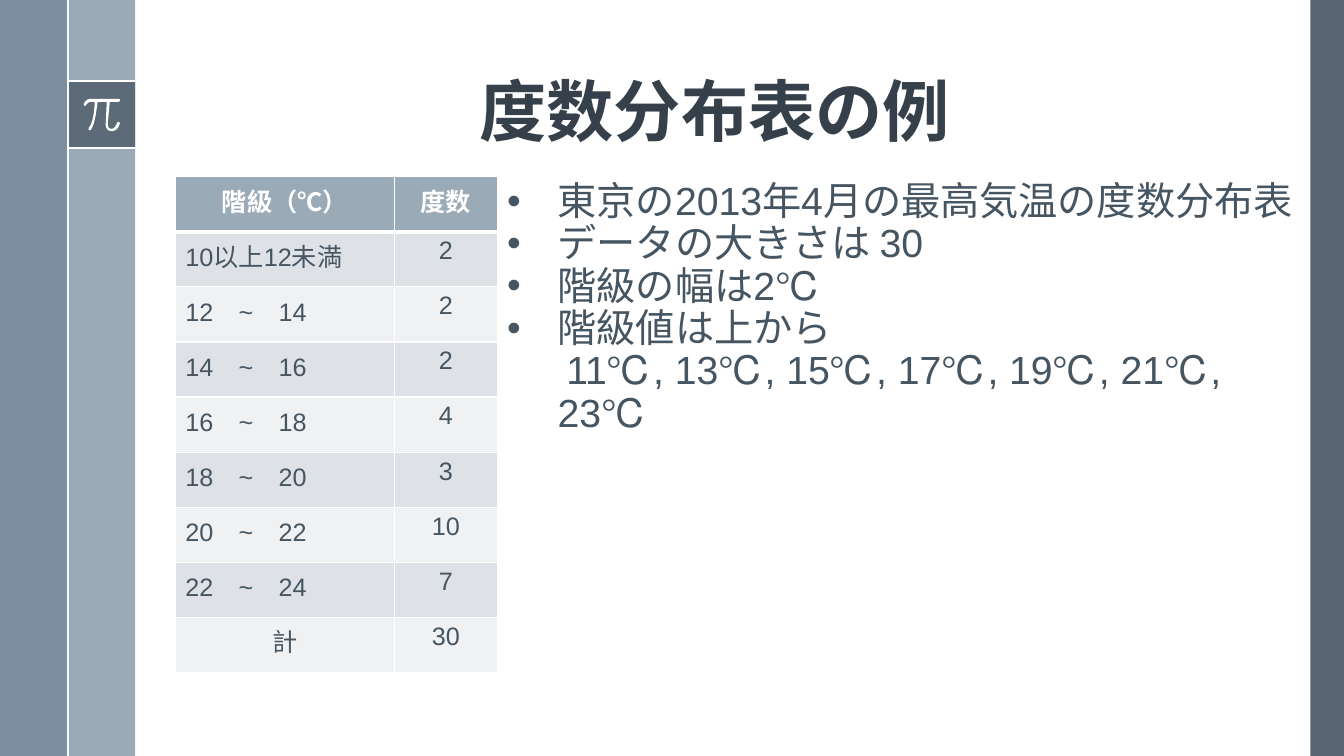
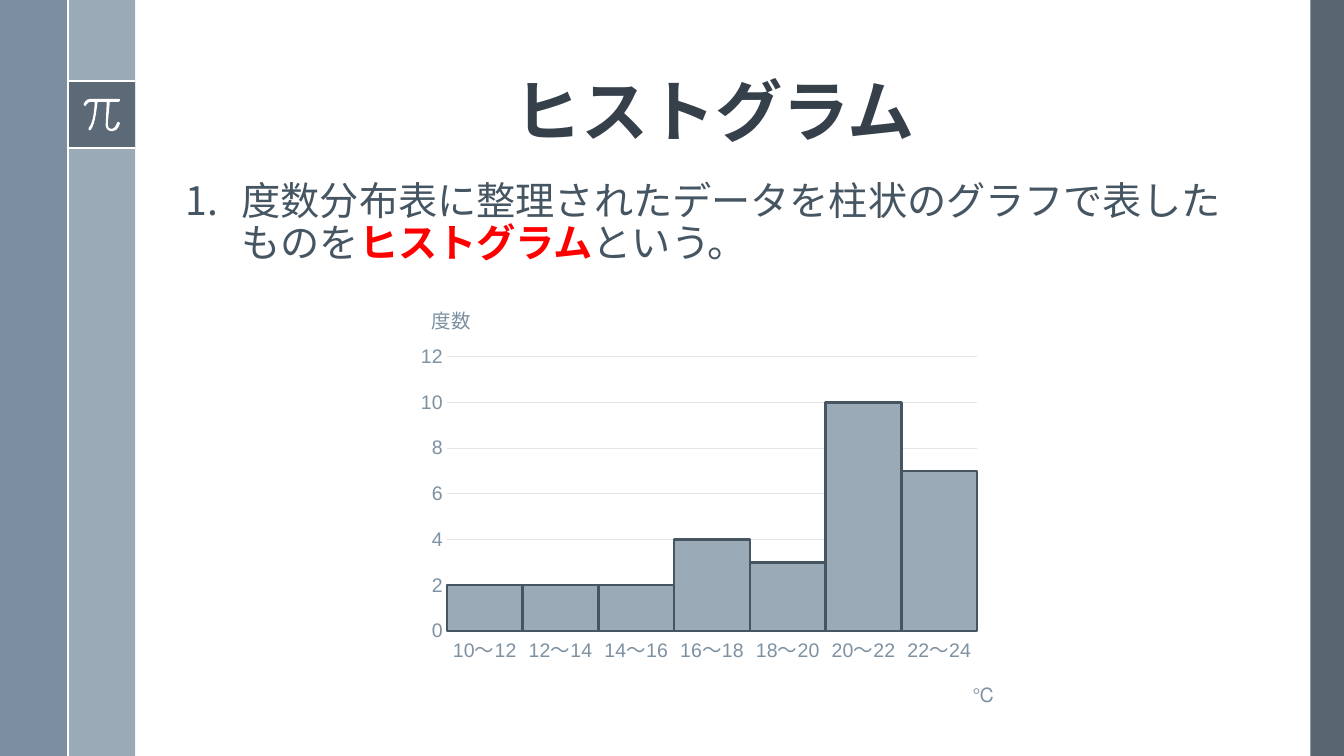
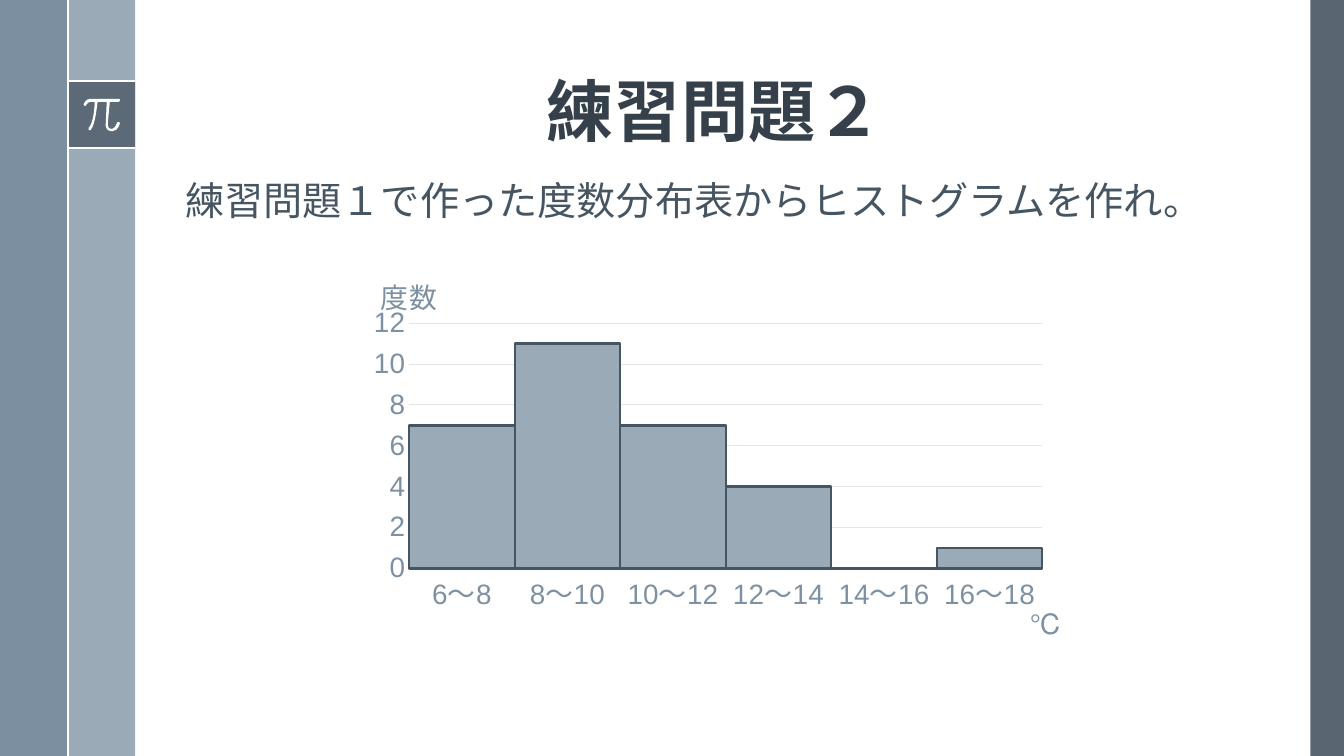
from lxml.etree import SubElement
from pptx import Presentation
from pptx.chart.data import CategoryChartData
from pptx.dml.color import RGBColor
from pptx.enum.chart import XL_CHART_TYPE, XL_TICK_MARK
from pptx.enum.shapes import MSO_CONNECTOR, MSO_SHAPE
from pptx.enum.text import MSO_ANCHOR, PP_ALIGN
from pptx.oxml.ns import qn
from pptx.util import Emu, Inches, Pt

# Palette and fonts
WHITE, DARK, INK, GREY = "FFFFFF", "35404A", "465562", "7D91A2"
STEEL, SLATE, BLUE, RED = "9BAAB7", "475562", "6A8093", "FF0000"
PALE, LIGHT, RULE = "DEE2E6", "EFF1F3", "E1E6EA"
LATIN, CJK = "Arial", "Noto Sans CJK JP"

# The slide is 20 columns wide; rows are as tall as columns are wide
WIDE, HIGH, COLS = Inches(13.333), Inches(7.5), 20
ROWS = 11.25
LEFT, TOP, SPAN = 2.61, 2.63, 16.05

# Outline of the pi sign: start, then cubic curves, in 1/100 inch
PI_START, PI_BOX = (118, 98), (83, 98)
PI_CURVES = [
    (90, 98, 90, 98, 90, 98), (85, 98, 83, 103, 83, 104),
    (83, 104, 83, 105, 84, 105), (85, 105, 85, 105, 85, 105),
    (85, 105, 87, 101, 90, 101), (94, 101, 94, 101, 94, 101),
    (94, 105, 93, 122, 88, 127), (87, 128, 87, 128, 88, 129),
    (88, 129, 89, 129, 90, 129), (95, 123, 96, 105, 97, 101),
    (106, 101, 106, 101, 106, 101), (105, 122, 105, 122, 105, 122),
    (105, 122, 104, 126, 107, 129), (108, 130, 109, 130, 110, 130),
    (111, 130, 111, 130, 112, 130), (117, 130, 119, 123, 119, 122),
    (119, 122, 118, 121, 118, 121), (117, 121, 116, 121, 116, 122),
    (116, 122, 115, 127, 111, 128), (110, 128, 109, 128, 108, 127),
    (107, 126, 107, 123, 107, 122), (109, 101, 109, 101, 109, 101),
    (118, 101, 118, 101, 118, 101), (119, 101, 119, 100, 119, 100),
    (119, 99, 119, 98, 118, 98),
]


def hue(code):
    return RGBColor.from_string(code)


def unit(count):
    return Emu(round(count * WIDE / COLS))


def box(*cells):
    return [unit(cell) for cell in cells]


def bend(shape, curves):
    """Turn the straight sides of an outline into cubic curves."""
    sides = list(shape._element.iter(qn("a:lnTo")))
    for side, curve in zip(sides, curves):
        side.tag = qn("a:cubicBezTo")
        for spot in range(2):
            knot = SubElement(side, qn("a:pt"))
            for key, value, base in zip("xy", curve[2 * spot:], PI_BOX):
                knot.set(key, str(Inches((value - base) / 100)))
            side.insert(spot, knot)


def style(run, size, color, face=LATIN, bold=False):
    font = run.font
    font.size, font.name, font.bold = Pt(size), face, bold
    font.color.rgb = hue(color)
    SubElement(run.font._element, qn("a:ea")).set("typeface", CJK)


def edge(cell, head):
    """White cell borders, heavier below the header."""
    props = cell._tc.get_or_add_tcPr()
    for spot, side in enumerate("LRTB"):
        thick = 3 if head and side == "B" else 1
        line = SubElement(props, qn(f"a:ln{side}"), w=str(Pt(thick)))
        props.insert(spot, line)
        fill = SubElement(line, qn("a:solidFill"))
        SubElement(fill, qn("a:srgbClr")).set("val", WHITE)


def place(node, index, frame, cells):
    """Fix a chart part at grid cells of the slide."""
    old = node.find(qn("c:layout"))
    if old is not None:
        node.remove(old)
    layout = SubElement(node, qn("c:layout"))
    node.insert(index, layout)
    spot = SubElement(layout, qn("c:manualLayout"))
    if len(cells) == 4:
        SubElement(spot, qn("c:layoutTarget")).set("val", "inner")
    for key in "xy":
        SubElement(spot, qn(f"c:{key}Mode")).set("val", "edge")
    x, y, w, h = frame
    for key, cell, base, full in zip("xywh", cells, (x, y, 0, 0),
                                     (w, h, w, h)):
        share = (cell - base) / full
        SubElement(spot, qn(f"c:{key}")).set("val", f"{share:.4f}")


class Deck:
    def __init__(self):
        self.file = Presentation()
        self.file.slide_width, self.file.slide_height = WIDE, HIGH
        self.slide = None

    def new(self, title):
        """Start a slide with the shared bands, sign and title."""
        self.slide = self.file.slides.add_slide(self.file.slide_layouts[6])
        self.band(19.5, 0, 0.5, ROWS, SLATE, 90)
        self.band(1.01, 0, 1, ROWS, STEEL)
        self.band(0, 0, 1.01, ROWS, BLUE, 88)
        self.band(1.01, 1.21, 1, 1, SLATE, 75)
        for y in (1.21, 2.2):
            self.line(1.01, y, 2.01, y)
        self.sign()
        self.line(1.01, 0, 1.01, ROWS)
        frame = self.text([[(title, DARK, True)]], LEFT, 0.28, SPAN, 2.04,
                          size=48, face=CJK)
        frame.vertical_anchor = MSO_ANCHOR.BOTTOM
        frame.paragraphs[0].alignment = PP_ALIGN.CENTER

    def paint(self, shape, color):
        shape.shadow.inherit = False
        shape.fill.solid()
        shape.fill.fore_color.rgb = hue(color)
        shape.line.fill.background()

    def band(self, x, y, w, h, color, alpha=100):
        shape = self.slide.shapes.add_shape(MSO_SHAPE.RECTANGLE,
                                            *box(x, y, w, h))
        self.paint(shape, color)
        if alpha < 100:
            tint = shape.fill._xPr.find(".//" + qn("a:srgbClr"))
            SubElement(tint, qn("a:alpha")).set("val", str(alpha * 1000))

    def line(self, *ends):
        line = self.slide.shapes.add_connector(MSO_CONNECTOR.STRAIGHT,
                                               *box(*ends))
        line.line.color.rgb = hue(WHITE)
        line.line.width = Pt(1.5)
        SubElement(line._element.spPr, qn("a:effectLst"))

    def sign(self):
        pen = self.slide.shapes.build_freeform(*PI_START, Inches(0.01))
        pen.add_line_segments([curve[4:] for curve in PI_CURVES], close=True)
        shape = pen.convert_to_shape()
        self.paint(shape, WHITE)
        scale = shape._element.find(".//" + qn("a:path"))
        scale.set("w", str(shape.width))
        scale.set("h", str(shape.height))
        for knot in scale.iter(qn("a:pt")):
            for key in "xy":
                value = int(knot.get(key))
                if value < 1000:
                    knot.set(key, str(Inches(value / 100)))
        bend(shape, PI_CURVES)

    def text(self, paras, x, y, w, h, size=28, face=LATIN, before=0,
             mark=None, indent=0):
        """Each paragraph is a list of (words, colour, bold)."""
        frame = self.slide.shapes.add_textbox(*box(x, y, w, h)).text_frame
        frame.word_wrap = True
        frame.text = "\n".join("" for _ in paras)
        for para, parts in zip(frame.paragraphs, paras):
            para.line_spacing, para.space_before = 0.9, Pt(before)
            for words, color, bold in parts:
                for row, piece in enumerate(words.split("\n")):
                    if row:
                        para.add_line_break()
                    run = para.add_run()
                    run.text = piece
                    style(run, size, color, face, bold)
            if mark:
                self.bullet(para, mark, indent)
        return frame

    def bullet(self, para, mark, indent):
        props = para._p.get_or_add_pPr()
        props.set("marL", str(Inches(indent)))
        props.set("indent", str(-Inches(indent)))
        if mark == "1.":
            SubElement(props, qn("a:buFont")).set("typeface", CJK)
            SubElement(props, qn("a:buAutoNum")).set("type", "arabicPeriod")
        else:
            SubElement(props, qn("a:buFont")).set("typeface", LATIN)
            SubElement(props, qn("a:buChar")).set("char", mark)

    def table(self, rows, x, y, widths, tall):
        shape = self.slide.shapes.add_table(
            len(rows), len(widths),
            *box(x, y, sum(widths), tall * len(rows)))
        grid = shape.table
        for col, width in zip(grid.columns, widths):
            col.width = unit(width)
        for r, row in enumerate(rows):
            head, last = r == 0, r == len(rows) - 1
            for c, words in enumerate(row):
                cell = grid.cell(r, c)
                cell.fill.solid()
                cell.fill.fore_color.rgb = hue(
                    STEEL if head else PALE if r % 2 else LIGHT)
                edge(cell, head)
                cell.text_frame.text = words
                para = cell.text_frame.paragraphs[0]
                if c or head or last:
                    para.alignment = PP_ALIGN.CENTER
                style(para.runs[0], 18, WHITE if head else INK, bold=head)

    def chart(self, names, counts, frame, size, plot, units):
        """A histogram; frame, plot and units are grid cells."""
        data = CategoryChartData()
        data.categories = names
        data.add_series("Series 1", counts)
        chart = self.slide.shapes.add_chart(
            XL_CHART_TYPE.COLUMN_CLUSTERED, *box(*frame), data).chart
        chart.has_legend = chart.has_title = False
        chart.font.size, chart.font.name = Pt(size), LATIN
        chart.font.color.rgb = hue(INK)

        # Bars
        bars = chart.plots[0]
        bars.gap_width, bars.overlap, bars.vary_by_categories = 0, -27, False
        form = bars.series[0].format
        form.fill.solid()
        form.fill.fore_color.rgb = hue(STEEL)
        form.line.color.rgb = hue(INK)
        form.line.width = Pt(1.75)

        # Axes
        base, side = chart.category_axis, chart.value_axis
        for axis, words in ((base, "℃"), (side, "度数")):
            axis.major_tick_mark = axis.minor_tick_mark = XL_TICK_MARK.NONE
            font = axis.tick_labels.font
            font.size, font.name = Pt(size), LATIN
            font.color.rgb = hue(GREY)
            label = axis.axis_title.text_frame
            label.text = words
            style(label.paragraphs[0].runs[0], size, GREY)
        side.minimum_scale, side.maximum_scale, side.major_unit = 0, 12, 2
        side.format.line.fill.background()
        for form in (base.format, side.major_gridlines.format):
            form.line.color.rgb = hue(RULE)
            form.line.width = Pt(0.75)

        # Places of the plot and the axis titles
        root = chart.element
        place(root.find(".//" + qn("c:plotArea")), 0, frame, plot)
        for node, cells in zip(root.iter(qn("c:title")), units):
            place(node, 1, frame, cells)
            body = node.find(".//" + qn("a:bodyPr"))
            body.set("rot", "0")
            body.set("vert", "horz")


def main():
    deck = Deck()

    # Frequency table
    deck.new("度数分布表の例")
    edges = range(12, 24, 2)
    counts = [2, 2, 2, 4, 3, 10, 7]
    names = ["10以上12未満"] + [f"{low}　~　{low + 2}" for low in edges]
    rows = [("階級（℃）", "度数"), *zip(names, map(str, counts)),
            ("計", str(sum(counts)))]
    deck.table(rows, LEFT, TOP, (3.26, 1.53), 0.82)
    mids = ", ".join(f"{mid}℃" for mid in range(11, 24, 2))
    notes = ["東京の2013年4月の最高気温の度数分布表", "データの大きさは 30",
             "階級の幅は2℃", f"階級値は上から\n {mids}"]
    deck.text([[(note, INK, False)] for note in notes],
              7.4, TOP, 12.15, 3.33, mark="•", indent=0.5)

    # Histogram
    deck.new("ヒストグラム")
    deck.text([[("度数分布表に整理されたデータを柱状のグラフで表したものを", INK, False),
                ("ヒストグラム", RED, True), ("という。", INK, False)]],
              LEFT, TOP, SPAN, 1.47, face=CJK, before=14,
              mark="1.", indent=0.56)
    deck.chart([f"{low}～{low + 2}" for low in range(10, 24, 2)], counts,
               (5.13, 4.1, 9.74, 7), 14, (6.66, 5.31, 7.94, 4.08),
               ((14.48, 10.1), (6.38, 4.46)))

    # Exercise
    deck.new("練習問題２")
    deck.text([[("練習問題１で作った度数分布表からヒストグラムを作れ。", INK, False)]],
              LEFT, TOP, SPAN, 1.47, face=CJK, before=14)
    deck.chart([f"{low}～{low + 2}" for low in range(6, 18, 2)],
               [7, 11, 7, 4, 0, 1],
               (4.08, 3.62, 11.82, 7.1), 20, (6.1, 4.81, 9.47, 3.65),
               ((15.31, 8.94), (5.6, 3.98)))

    deck.file.save("out.pptx")


if __name__ == "__main__":
    main()
